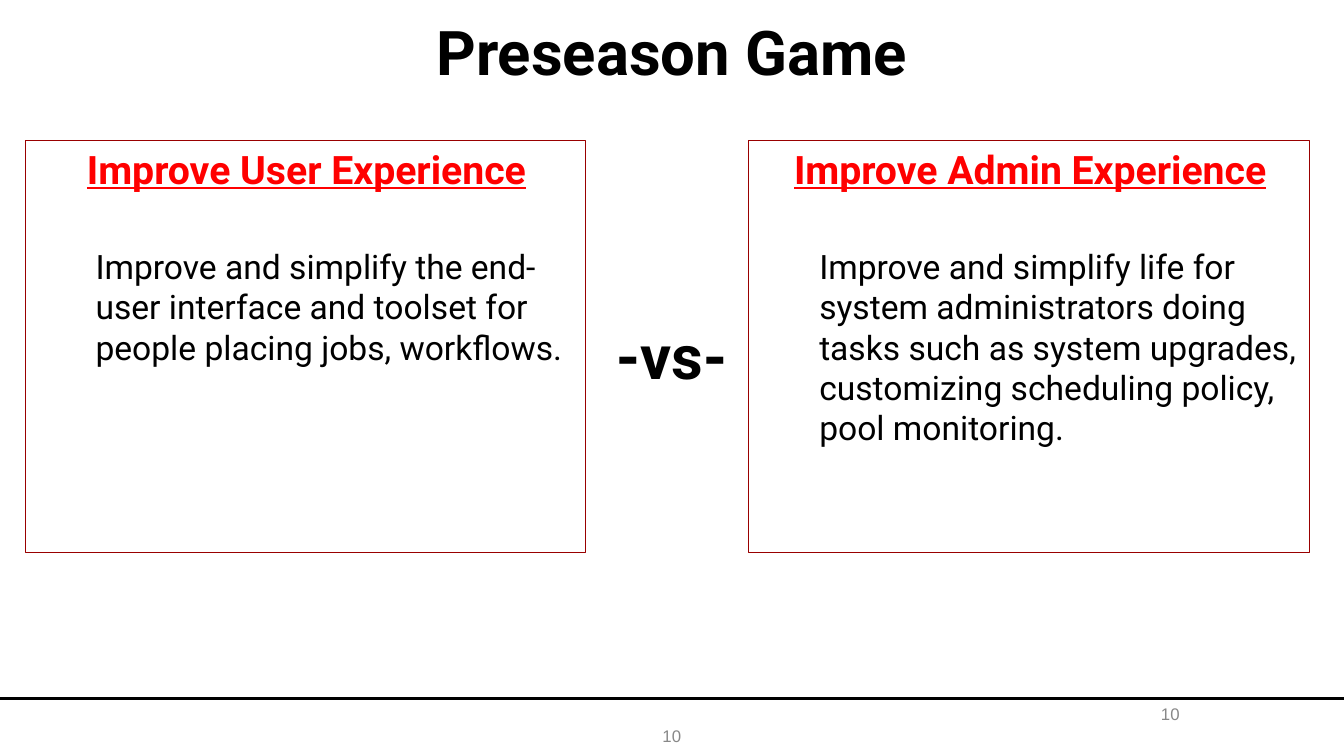
"""Build the Preseason Game slide with two goals set side by side."""
from dataclasses import dataclass

from pptx import Presentation
from pptx.dml.color import RGBColor
from pptx.enum.shapes import MSO_CONNECTOR, MSO_SHAPE
from pptx.enum.text import MSO_ANCHOR, PP_ALIGN
from pptx.oxml.ns import qn
from pptx.slide import Slide
from pptx.text.text import TextFrame, _Paragraph
from pptx.util import Pt
from lxml import etree

LINE = MSO_CONNECTOR.STRAIGHT
RECT = MSO_SHAPE.RECTANGLE
MIDDLE, TOP = MSO_ANCHOR.MIDDLE, MSO_ANCHOR.TOP
CENTER, LEFT = PP_ALIGN.CENTER, PP_ALIGN.LEFT

COLORS = {"ink": "000000", "head": "FF0000", "edge": "990000", "page": "888888"}
WIDTH, HEIGHT = 960, 540
CARD_TOP, CARD_WIDTH, CARD_HEIGHT = 100.08, 400.32, 294.48


@dataclass(frozen=True)
class Style:
    """Font settings of a paragraph."""
    size: float
    color: str
    bold: bool = False
    under: bool = False
    face: str = "Roboto"


@dataclass(frozen=True)
class Label:
    """One line of centred text in a box."""
    text: str
    left: float
    top: float
    width: float
    height: float
    style: Style


@dataclass(frozen=True)
class Card:
    """A framed goal with its heading and body."""
    left: float
    head: str
    body: str


BIG = Style(44, "ink", bold=True)
HEAD = Style(28, "head", bold=True, under=True)
BODY = Style(24, "ink")
PAGE = Style(12, "page", face="Arial")

TITLE = Label("Preseason Game", 0, 0, WIDTH, 72, BIG)
LABELS = [
    Label("10", 367.92, 511.2, 223.92, 28.8, PAGE),
    Label("10", 784.08, 491.76, 103.68, 36, PAGE),
    Label("-vs-", 425.52, 217.44, 109.44, 72, BIG),
]
CARDS = [
    Card(18, "Improve User Experience",
         "Improve and simplify the end-user interface and toolset for "
         "people placing jobs, workflows."),
    Card(534.96, "Improve Admin Experience",
         "Improve and simplify life for system administrators doing tasks "
         "such as system upgrades, customizing scheduling policy, pool monitoring."),
]


def paint(name: str) -> RGBColor:
    """Return the named colour."""
    return RGBColor.from_string(COLORS[name])


def set_frame(frame: TextFrame, anchor: MSO_ANCHOR) -> None:
    """Set wrapping, anchor and insets."""
    frame.word_wrap = True
    frame.vertical_anchor = anchor
    frame.margin_left = frame.margin_right = Pt(7.2)
    frame.margin_top = frame.margin_bottom = Pt(3.6)


def write(para: _Paragraph, text: str, style: Style, align: PP_ALIGN,
          indent: float = 0) -> None:
    """Fill and format a paragraph."""
    para.text = text
    para.alignment = align
    props = para._p.get_or_add_pPr()
    props.set("marL", str(Pt(indent)))
    props.set("indent", "0")
    font = para.font
    font.name, font.size = style.face, Pt(style.size)
    font.bold, font.underline = style.bold, style.under
    font.color.rgb = paint(style.color)


def add_title(slide: Slide, label: Label) -> None:
    """Place and fill the title."""
    title = slide.shapes.title
    title.left, title.top = Pt(label.left), Pt(label.top)
    title.width, title.height = Pt(label.width), Pt(label.height)
    set_frame(title.text_frame, MIDDLE)
    write(title.text_frame.paragraphs[0], label.text, label.style, CENTER)


def add_label(slide: Slide, label: Label) -> None:
    """Draw a text box."""
    box = slide.shapes.add_textbox(Pt(label.left), Pt(label.top),
                                   Pt(label.width), Pt(label.height))
    set_frame(box.text_frame, MIDDLE)
    write(box.text_frame.paragraphs[0], label.text, label.style, CENTER)


def add_card(slide: Slide, card: Card) -> None:
    """Draw a framed goal."""
    shape = slide.shapes.add_shape(RECT, Pt(card.left), Pt(CARD_TOP),
                                   Pt(CARD_WIDTH), Pt(CARD_HEIGHT))
    shape.shadow.inherit = False
    shape.fill.background()
    shape.line.color.rgb = paint("edge")
    shape.line.width = Pt(0.75)
    frame = shape.text_frame
    set_frame(frame, TOP)
    write(frame.paragraphs[0], card.head, HEAD, CENTER, 1.44)
    body = frame.add_paragraph()
    write(body, card.body, BODY, LEFT, 43.2)
    body.space_before = Pt(38.4)


def add_rule(slide: Slide) -> None:
    """Draw the footer rule."""
    rule = slide.shapes.add_connector(LINE, 0, Pt(499), Pt(WIDTH), Pt(499))
    rule.line.color.rgb = paint("ink")
    rule.line.width = Pt(2.25)
    etree.SubElement(rule._element.spPr, qn("a:effectLst"))


def main() -> None:
    """Build and save the deck."""
    deck = Presentation()
    deck.slide_width, deck.slide_height = Pt(WIDTH), Pt(HEIGHT)
    slide = deck.slides.add_slide(deck.slide_layouts[5])
    add_rule(slide)
    add_title(slide, TITLE)
    for label in LABELS:
        add_label(slide, label)
    for card in CARDS:
        add_card(slide, card)
    deck.save("out.pptx")


if __name__ == "__main__":
    main()
